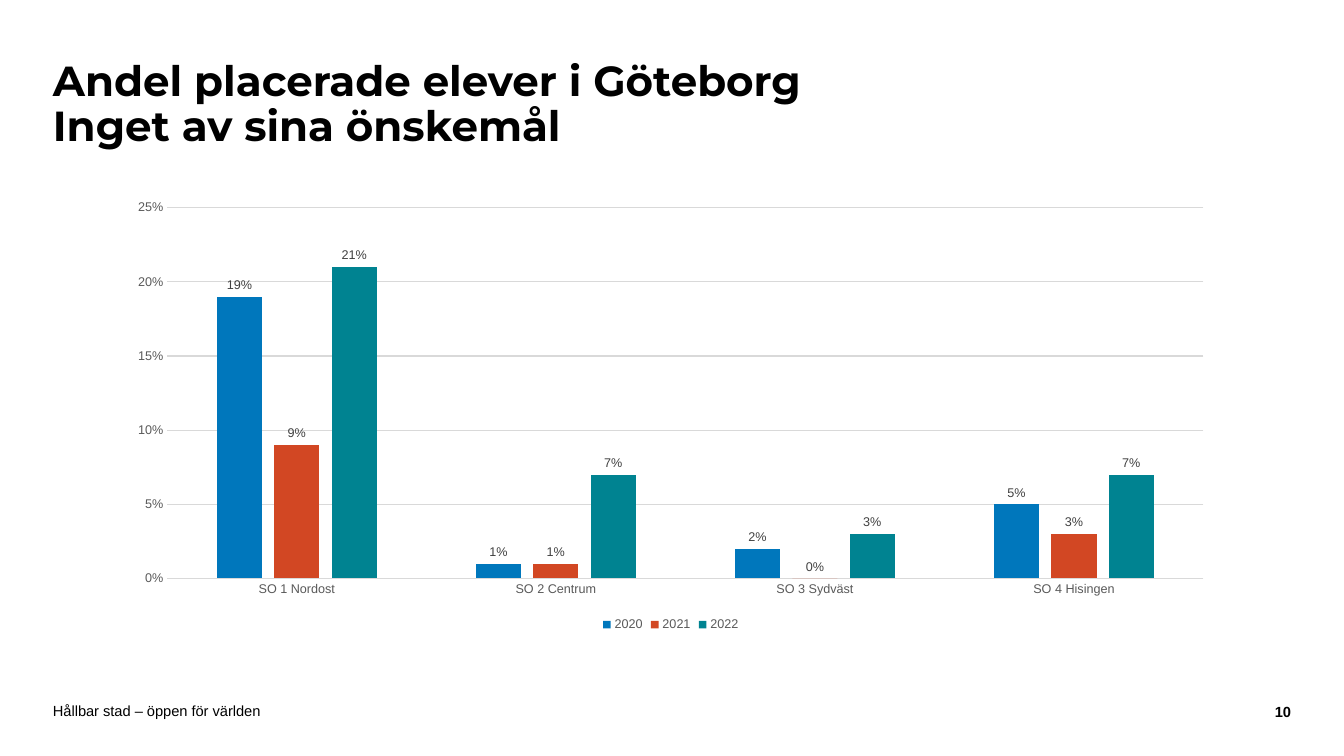
from dataclasses import dataclass

import pptx
import pptx.chart.data
import pptx.dml.color
import pptx.enum.chart
import pptx.enum.text
import pptx.util

Pt = pptx.util.Pt
Color = pptx.dml.color.RGBColor
Align = pptx.enum.text.PP_ALIGN

BLACK = Color(0x00, 0x00, 0x00)
GREY = Color(0x59, 0x59, 0x59)
DARK = Color(0x40, 0x40, 0x40)
RULE = Color(0xD9, 0xD9, 0xD9)
BLUE = Color(0x00, 0x77, 0xBC)
RED = Color(0xD2, 0x47, 0x23)
TEAL = Color(0x00, 0x83, 0x91)


@dataclass
class Label:
    lines: list[str]
    left: float
    top: float
    width: float
    height: float
    size: float
    face: str = "Arial"
    bold: bool = False
    align: Align = Align.LEFT
    inset: float = 0
    space: float = 1.0


@dataclass
class Year:
    name: str
    shares: list[float]
    color: Color


LABELS = [
    Label(["Andel placerade elever i Göteborg", "Inget av sina önskemål"],
          37.8, 30.2, 722, 90.7, 30, "Montserrat", True, inset=3.6, space=0.9),
    Label(["Hållbar stad – öppen för världen"], 37.8, 502, 680, 11.5, 10.5),
    Label(["10"], 876.2, 502.5, 46, 11.5, 10.5, bold=True, align=Align.RIGHT),
]
AREAS = ["SO 1 Nordost", "SO 2 Centrum", "SO 3 Sydväst", "SO 4 Hisingen"]
YEARS = [
    Year("2020", [0.19, 0.01, 0.02, 0.05], BLUE),
    Year("2021", [0.09, 0.01, 0, 0.03], RED),
    Year("2022", [0.21, 0.07, 0.03, 0.07], TEAL),
]


def style(font: pptx.text.text.Font, size: float, color: Color,
          face: str = "Arial", bold: bool = False) -> None:
    font.size = Pt(size)
    font.name = face
    font.bold = bold
    font.color.rgb = color


def add_label(slide: pptx.slide.Slide, label: Label) -> None:
    box = slide.shapes.add_textbox(Pt(label.left), Pt(label.top),
                                   Pt(label.width), Pt(label.height))
    frame = box.text_frame
    frame.word_wrap = True
    frame.vertical_anchor = pptx.enum.text.MSO_ANCHOR.MIDDLE
    frame.margin_left = frame.margin_right = 0
    frame.margin_top = frame.margin_bottom = Pt(label.inset)
    para = frame.paragraphs[0]
    para.alignment = label.align
    para.line_spacing = label.space
    for index, line in enumerate(label.lines):
        if index:
            para.add_line_break()
        run = para.add_run()
        run.text = line
        style(run.font, label.size, BLACK, label.face, label.bold)


def style_line(line: pptx.dml.line.LineFormat) -> None:
    line.color.rgb = RULE
    line.width = Pt(0.75)


def style_axes(chart: pptx.chart.chart.Chart) -> None:
    for axis in (chart.category_axis, chart.value_axis):
        axis.major_tick_mark = pptx.enum.chart.XL_TICK_MARK.NONE
        axis.minor_tick_mark = pptx.enum.chart.XL_TICK_MARK.NONE
        style(axis.tick_labels.font, 9, GREY)
    style_line(chart.category_axis.format.line)
    value = chart.value_axis
    value.minimum_scale, value.maximum_scale = 0, 0.25
    value.major_unit = 0.05
    value.format.line.fill.background()
    style_line(value.major_gridlines.format.line)
    value.tick_labels.number_format = "0%"
    value.tick_labels.number_format_is_linked = False


def add_chart(slide: pptx.slide.Slide) -> None:
    data = pptx.chart.data.CategoryChartData(number_format="0%")
    data.categories = AREAS
    for year in YEARS:
        data.add_series(year.name, year.shares)
    chart = slide.shapes.add_chart(
        pptx.enum.chart.XL_CHART_TYPE.COLUMN_CLUSTERED,
        Pt(82.8), Pt(136.8), Pt(792.7), Pt(317.5), data).chart
    style(chart.font, 10, BLACK)
    chart.has_title = False
    chart.has_legend = True
    chart.legend.position = pptx.enum.chart.XL_LEGEND_POSITION.BOTTOM
    chart.legend.include_in_layout = False
    style(chart.legend.font, 9, GREY)
    style_axes(chart)
    plot = chart.plots[0]
    plot.gap_width = 219
    plot.overlap = -27
    plot.vary_by_categories = False
    for series, year in zip(plot.series, YEARS):
        series.format.fill.solid()
        series.format.fill.fore_color.rgb = year.color
        series.invert_if_negative = False
        marks = series.data_labels
        marks.show_value = True
        marks.position = pptx.enum.chart.XL_LABEL_POSITION.OUTSIDE_END
        marks.number_format = "0%"
        marks.number_format_is_linked = False
        style(marks.font, 9, DARK)


def main() -> None:
    deck = pptx.Presentation()
    deck.slide_width, deck.slide_height = Pt(960), Pt(540)
    slide = deck.slides.add_slide(deck.slide_layouts[6])
    for label in LABELS:
        add_label(slide, label)
    add_chart(slide)
    deck.save("out.pptx")


if __name__ == "__main__":
    main()
